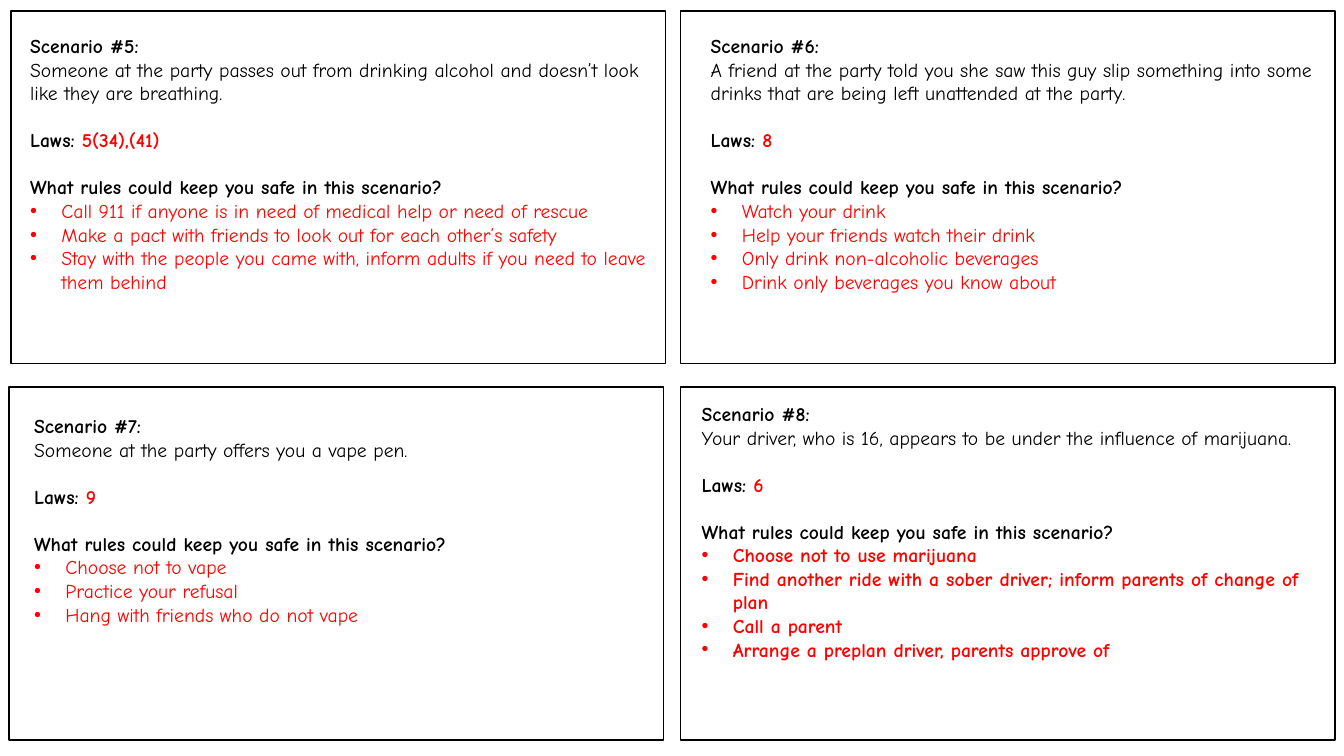
"""Build a slide of four party safety cards, each with its laws and rules."""
from dataclasses import dataclass

import pptx
import pptx.dml.color
import pptx.enum.shapes
import pptx.enum.text
import pptx.oxml.ns
import pptx.util
from lxml import etree

Inches = pptx.util.Inches
Pt = pptx.util.Pt

FONT = "Comic Neue"
BLACK, RED, WHITE = "000000", "FF0000", "FFFFFF"
GAP = Pt(16.8)
INDENT = Inches(0.31)


@dataclass(frozen=True)
class Card:
    number: int
    frame: tuple[float, float]
    text: tuple[float, float]
    height: float
    story: str
    laws: str
    rules: tuple[str, ...]
    bold: bool = False


CARDS = (
    Card(5, (0.11, 0.11), (0.2, 0.29), 3.4,
         "Someone at the party passes out from drinking alcohol and doesn’t look "
         "like they are breathing.",
         "5(34),(41)",
         ("Call 911 if anyone is in need of medical help or need of rescue",
          "Make a pact with friends to look out for each other’s safety",
          "Stay with the people you came with, inform adults if you need to leave "
          "them behind")),
    Card(6, (6.75, 0.11), (6.95, 0.29), 2.93,
         "A friend at the party told you she saw this guy slip something into some "
         "drinks that are being left unattended at the party.",
         "8",
         ("Watch your drink",
          "Help your friends watch their drink",
          "Only drink non-alcoholic beverages",
          "Drink only beverages you know about")),
    Card(7, (0.09, 3.84), (0.24, 4.06), 2.22,
         "Someone at the party offers you a vape pen.",
         "9",
         ("Choose not to vape",
          "Practice your refusal",
          "Hang with friends who do not vape")),
    Card(8, (6.75, 3.84), (6.86, 3.94), 3.4,
         "Your driver, who is 16, appears to be under the influence of marijuana.",
         "6",
         ("Choose not to use marijuana",
          "Find another ride with a sober driver; inform parents of change of plan",
          "Call a parent",
          "Arrange a preplan driver, parents approve of"),
         bold=True),
)


def color(code: str) -> pptx.dml.color.RGBColor:
    return pptx.dml.color.RGBColor.from_string(code)


def draw_frame(slide, card: Card) -> None:
    left, top = card.frame
    box = slide.shapes.add_shape(
        pptx.enum.shapes.MSO_SHAPE.RECTANGLE,
        Inches(left), Inches(top), Inches(6.49), Inches(3.5))
    box.shadow.inherit = False
    box.fill.solid()
    box.fill.fore_color.rgb = color(WHITE)
    box.line.color.rgb = color(BLACK)
    box.line.width = Pt(1)


def add_line(frame, text: str, bold: bool = True, tint: str = BLACK,
             space: int = 0):
    first = frame.paragraphs[0]
    line = frame.add_paragraph() if first.runs else first
    line.add_run().text = text
    line.space_before = space
    line.font.name = FONT
    line.font.size = Pt(14)
    line.font.bold = bold
    line.font.color.rgb = color(tint)
    return line


def add_dot(line) -> None:
    props = line._p.get_or_add_pPr()
    props.set("marL", str(INDENT))
    props.set("indent", str(-INDENT))
    qn = pptx.oxml.ns.qn
    dot = etree.Element(qn("a:buChar"), char="•")
    face = etree.Element(qn("a:buFont"), typeface="Arial")
    last = props.find(qn("a:defRPr"))
    last.addprevious(face)
    last.addprevious(dot)


def draw_text(slide, card: Card) -> None:
    left, top = card.text
    box = slide.shapes.add_textbox(
        Inches(left), Inches(top), Inches(6.38), Inches(card.height))
    frame = box.text_frame
    frame.word_wrap = True
    frame.auto_size = pptx.enum.text.MSO_AUTO_SIZE.SHAPE_TO_FIT_TEXT
    add_line(frame, f"Scenario #{card.number}:")
    add_line(frame, card.story, bold=False)
    laws = add_line(frame, "Laws: ", space=GAP).add_run()
    laws.text = card.laws
    laws.font.color.rgb = color(RED)
    add_line(frame, "What rules could keep you safe in this scenario?", space=GAP)
    for rule in card.rules:
        add_dot(add_line(frame, rule, card.bold, RED))


def main() -> None:
    deck = pptx.Presentation()
    deck.slide_width = Inches(13.33)
    deck.slide_height = Inches(7.5)
    slide = deck.slides.add_slide(deck.slide_layouts[6])
    for draw in (draw_frame, draw_text):
        for card in CARDS:
            draw(slide, card)
    deck.save("out.pptx")


if __name__ == "__main__":
    main()
